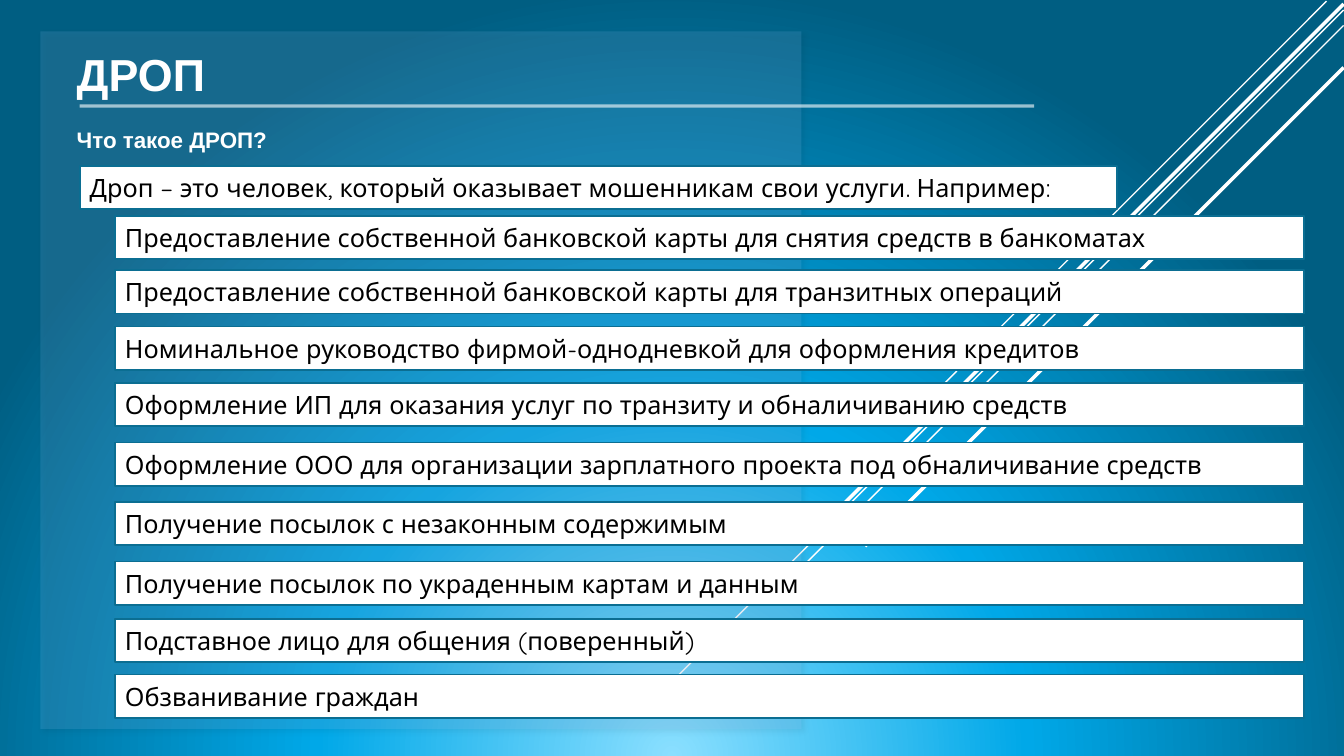
from dataclasses import dataclass

from lxml import etree
from pptx import Presentation
from pptx.dml.color import RGBColor
from pptx.enum.shapes import MSO_CONNECTOR, MSO_SHAPE
from pptx.enum.text import MSO_ANCHOR, PP_ALIGN
from pptx.oxml import parse_xml
from pptx.oxml.ns import nsdecls, qn
from pptx.util import Cm, Pt

WHITE = "FFFFFF"
BLACK = "000000"
EDGE = "0B6E92"
HEADING_FONT = "Arial"
STATEMENT_FONT = "Quicksand"


@dataclass(frozen=True)
class Ray:
    x: float
    y: float
    reach: float
    weight: float


@dataclass(frozen=True)
class Statement:
    text: str
    top: float
    left: float = 2.9
    width: float = 29.97
    height: float = 1.09


RAYS = [
    Ray(33.43, 0.03, 10.58, 1),
    Ray(33.86, 0.25, 16.89, 1),
    Ray(33.86, 0.64, 13.77, 1),
    Ray(33.86, 0.1, 13.47, 2.5),
    Ray(33.86, 1.7, 12.06, 2.5),
]

STATEMENTS = [
    Statement("Дроп – это человек, который оказывает мошенникам свои услуги. Например:", 4.19, 2.01, 26.14, 1.07),
    Statement("Предоставление собственной банковской карты для снятия средств в банкоматах", 5.44),
    Statement("Предоставление собственной банковской карты для транзитных операций", 6.81),
    Statement("Номинальное руководство фирмой-однодневкой для оформления кредитов", 8.23),
    Statement("Оформление ИП для оказания услуг по транзиту и обналичиванию средств", 9.65),
    Statement("Оформление ООО для организации зарплатного проекта под обналичивание средств", 11.15),
    Statement("Получение посылок с незаконным содержимым", 12.65),
    Statement("Получение посылок по украденным картам и данным", 14.15),
    Statement("Подставное лицо для общения (поверенный)", 15.6),
    Statement("Обзванивание граждан", 17),
]


def colour(value: str) -> RGBColor:
    return RGBColor.from_string(value)


def set_alpha(solid_fill, percent: int) -> None:
    alpha = etree.SubElement(solid_fill[0], qn("a:alpha"))
    alpha.set("val", str(percent * 1000))


def paint_background(slide) -> None:
    slide.background.fill.gradient()
    gradient = slide.element.find(".//" + qn("a:gradFill"))
    stops = "".join(
        f'<a:gs pos="{position * 1000}"><a:srgbClr val="{value}"/></a:gs>'
        for position, value in [(0, "8ADFFF"), (46, "00A8E8"), (100, "005E82")]
    )
    radial = parse_xml(
        f'<a:gradFill {nsdecls("a")} rotWithShape="1"><a:gsLst>{stops}</a:gsLst>'
        '<a:path path="circle"><a:fillToRect l="50000" t="130000" r="50000" b="-30000"/></a:path>'
        "</a:gradFill>"
    )
    gradient.getparent().replace(gradient, radial)


def add_line(slide, x1: float, y1: float, x2: float, y2: float, weight: float):
    line = slide.shapes.add_connector(MSO_CONNECTOR.STRAIGHT, Cm(x1), Cm(y1), Cm(x2), Cm(y2))
    line.line.color.rgb = colour(WHITE)
    line.line.width = Pt(weight)
    etree.SubElement(line.element.spPr, qn("a:effectLst"))
    return line


def add_panel(slide) -> None:
    panel = slide.shapes.add_shape(MSO_SHAPE.RECTANGLE, Cm(1.02), Cm(0.79), Cm(19.18), Cm(17.58))
    panel.fill.solid()
    panel.fill.fore_color.rgb = colour("99CCFF")
    panel.line.fill.background()
    properties = panel.element.spPr
    set_alpha(properties.find(qn("a:solidFill")), 15)
    properties.append(parse_xml(
        f'<a:effectLst {nsdecls("a")}>'
        f'<a:outerShdw blurRad="{Pt(4)}" dist="{Pt(3)}" dir="2700000" algn="tl" rotWithShape="0">'
        f'<a:srgbClr val="{BLACK}"><a:alpha val="40000"/></a:srgbClr></a:outerShdw></a:effectLst>'
    ))


def write(paragraph, text: str, font: str, size: float, value: str, bold: bool = False) -> None:
    run = paragraph.add_run()
    run.text = text
    run.font.name = font
    run.font.size = Pt(size)
    run.font.bold = bold
    run.font.color.rgb = colour(value)


def place_heading(slide, heading, text: str, top: float, width: float, height: float,
                  size: float, anchor: MSO_ANCHOR, align: PP_ALIGN, after: float) -> None:
    slide.shapes.element.append(heading.element)
    heading.left, heading.top = Cm(1.68), Cm(top)
    heading.width, heading.height = Cm(width), Cm(height)
    heading.text_frame.vertical_anchor = anchor
    paragraph = heading.text_frame.paragraphs[0]
    paragraph.alignment = align
    paragraph.space_before = Pt(0)
    paragraph.space_after = Pt(after)
    write(paragraph, text, HEADING_FONT, size, WHITE, True)


def add_statement(slide, statement: Statement) -> None:
    bar = slide.shapes.add_shape(
        MSO_SHAPE.RECTANGLE, Cm(statement.left), Cm(statement.top), Cm(statement.width), Cm(statement.height)
    )
    bar.shadow.inherit = False
    bar.fill.solid()
    bar.fill.fore_color.rgb = colour(WHITE)
    bar.line.color.rgb = colour(EDGE)
    bar.line.width = Pt(1.25)
    bar.text_frame.word_wrap = True
    bar.text_frame.vertical_anchor = MSO_ANCHOR.MIDDLE
    paragraph = bar.text_frame.paragraphs[0]
    paragraph.alignment = PP_ALIGN.LEFT
    write(paragraph, statement.text, STATEMENT_FONT, 18, BLACK)


def main() -> None:
    presentation = Presentation()
    presentation.slide_width, presentation.slide_height = Cm(33.87), Cm(19.05)
    slide = presentation.slides.add_slide(presentation.slide_layouts[0])
    paint_background(slide)
    for ray in RAYS:
        add_line(slide, ray.x, ray.y, ray.x - ray.reach, ray.y + ray.reach, ray.weight)
    add_panel(slide)
    place_heading(slide, slide.shapes.title, "ДРОП", 1.17, 30.43, 1.5, 32,
                  MSO_ANCHOR.BOTTOM, PP_ALIGN.LEFT, 0)
    place_heading(slide, slide.placeholders[1], "Что такое ДРОП?", 3.05, 31.67, 0.94, 16,
                  MSO_ANCHOR.TOP, PP_ALIGN.JUSTIFY, 6)
    underline = add_line(slide, 2.01, 2.67, 26.06, 2.67, 2.25)
    set_alpha(underline.element.spPr.find(".//" + qn("a:solidFill")), 60)
    for statement in STATEMENTS:
        add_statement(slide, statement)
    presentation.save("out.pptx")


if __name__ == "__main__":
    main()
